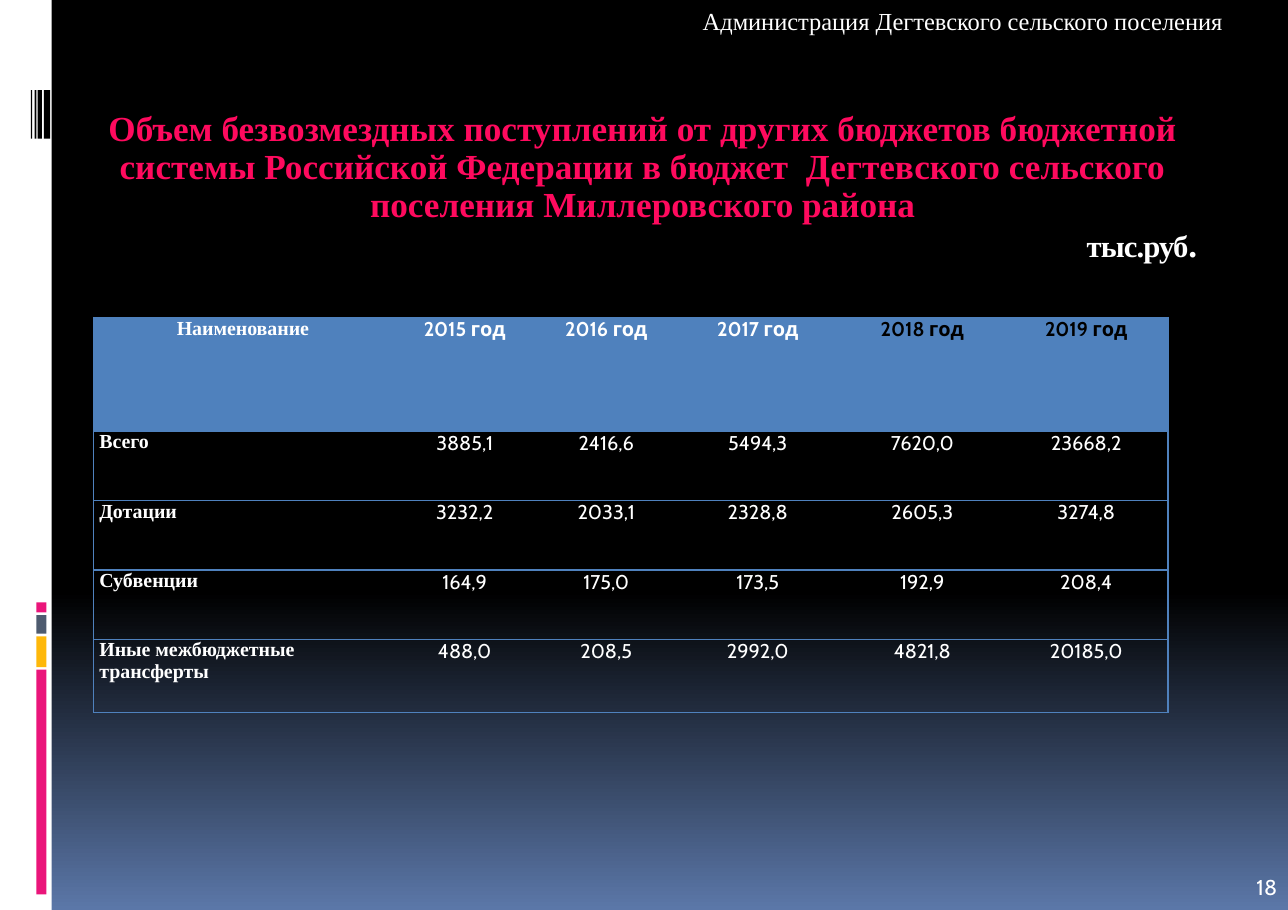
from dataclasses import dataclass

from lxml import etree
from pptx import Presentation
from pptx.dml.color import RGBColor
from pptx.enum.shapes import MSO_SHAPE
from pptx.enum.text import MSO_ANCHOR, PP_ALIGN
from pptx.oxml.ns import qn
from pptx.util import Cm, Pt

RECTANGLE = MSO_SHAPE.RECTANGLE
LEFT, CENTER, RIGHT = PP_ALIGN.LEFT, PP_ALIGN.CENTER, PP_ALIGN.RIGHT
TOP, BOTTOM = MSO_ANCHOR.TOP, MSO_ANCHOR.BOTTOM


@dataclass(frozen=True)
class Theme:
    """Colours, fonts and type sizes of the slide."""
    white: str = "FFFFFF"
    black: str = "000000"
    sky: str = "5B77A8"
    pink: str = "EA157A"
    amber: str = "FEB80A"
    slate: str = "4E5B6F"
    title: str = "FF0A5E"
    grid: str = "4F81BD"
    serif: str = "Times New Roman"
    sans: str = "Cabin"
    title_size: int = 23
    unit_size: int = 20
    owner_size: int = 16
    number_size: int = 14
    table_size: int = 13


@dataclass(frozen=True)
class Box:
    """A region in centimetres."""
    left: float
    top: float
    width: float
    height: float

    def lengths(self):
        """Return the region as slide lengths."""
        return Cm(self.left), Cm(self.top), Cm(self.width), Cm(self.height)


THEME = Theme()
HEADINGS = ["Наименование", "2015 год", "2016 год", "2017 год", "2018 год", "2019 год"]
RECEIPTS = [
    ["Всего", "3885,1", "2416,6", "5494,3", "7620,0", "23668,2"],
    ["Дотации", "3232,2", "2033,1", "2328,8", "2605,3", "3274,8"],
    ["Субвенции", "164,9", "175,0", "173,5", "192,9", "208,4"],
    ["Иные межбюджетные трансферты", "488,0", "208,5", "2992,0", "4821,8", "20185,0"],
]
COLUMN_SHARES = [6.88, 3.35, 3.18, 3.81, 3.78, 3.78]
ROW_SHARES = [2.62, 1.6, 1.6, 1.6, 1.68]


def style_run(run, size, color=THEME.white, font=THEME.serif, bold=False):
    """Set the type of a run."""
    run.font.name = font
    run.font.size = Pt(size)
    run.font.bold = bold
    run.font.color.rgb = RGBColor.from_string(color)


def add_label(slide, box, text, size, color=THEME.white, font=THEME.serif,
              bold=False, align=LEFT, anchor=TOP, inset=(0, 0), line=None):
    """Write one paragraph in a box and return it."""
    frame = slide.shapes.add_textbox(*box.lengths()).text_frame
    frame.word_wrap = True
    frame.vertical_anchor = anchor
    frame.margin_left = frame.margin_right = Cm(inset[0])
    frame.margin_top = frame.margin_bottom = Cm(inset[1])
    frame.text = text
    paragraph = frame.paragraphs[0]
    paragraph.alignment = align
    if line:
        paragraph.line_spacing = Pt(line)
    style_run(paragraph.runs[0], size, color, font, bold)
    return paragraph


def add_bar(slide, box, color):
    """Draw a plain filled rectangle."""
    bar = slide.shapes.add_shape(RECTANGLE, *box.lengths())
    bar.shadow.inherit = False
    bar.fill.solid()
    bar.fill.fore_color.rgb = RGBColor.from_string(color)
    bar.line.fill.background()


def paint_background(slide):
    """Fade the slide from black to blue at the foot."""
    fill = slide.background.fill
    fill.gradient()
    fill.gradient_angle = 270
    for stop, position, color in zip(fill.gradient_stops, (0.65, 1), (THEME.black, THEME.sky)):
        stop.position = position
        stop.color.rgb = RGBColor.from_string(color)


def add_sidebar(slide, box):
    """Draw the white strip with its stripes and coloured blocks."""
    add_bar(slide, box, THEME.white)
    for offset, width in ((0.71, 0.03), (0.8, 0.04), (0.87, 0.1), (1.01, 0.15)):
        add_bar(slide, Box(box.left + offset, box.top + 2.08, width, 1.12), THEME.black)
    top, gap = box.top + 13.89, 0.06
    blocks = ((0.23, THEME.pink), (0.43, THEME.slate), (0.71, THEME.amber), (5.18, THEME.pink))
    for height, color in blocks:
        add_bar(slide, Box(box.left + 0.84, top, 0.23, height), color)
        top += height + gap


def add_heading(slide, box):
    """Write the title with the unit of measure beneath it."""
    add_label(
        slide, Box(box.left, box.top, box.width, 2.67),
        "Объем безвозмездных поступлений от других бюджетов бюджетной системы "
        "Российской Федерации в бюджет  Дегтевского сельского поселения "
        "Миллеровского района",
        THEME.title_size, THEME.title, bold=True, align=CENTER, line=25)
    unit = add_label(slide, Box(box.left + 23.05, box.top + 2.67, 3.6, 0.89), "тыс.руб",
                     THEME.unit_size, bold=True, line=25)
    unit.runs[0].font._element.set("spc", "-60")
    stop = unit.add_run()
    stop.text = "."
    style_run(stop, THEME.title_size, bold=True)


def set_borders(cell, edges):
    """Rule the named edges of a cell and clear the others."""
    properties = cell._tc.get_or_add_tcPr()
    for edge in "LRTB":
        line = etree.SubElement(properties, qn(f"a:ln{edge}"), w=str(Pt(1)))
        if edge in edges:
            fill = etree.SubElement(line, qn("a:solidFill"))
            etree.SubElement(fill, qn("a:srgbClr"), val=THEME.grid)
        else:
            etree.SubElement(line, qn("a:noFill"))


def fill_cell(cell, text, row, column):
    """Write and format one cell according to its place."""
    is_header, is_name = row == 0, column == 0
    is_last = column == len(HEADINGS) - 1
    set_borders(cell, "TB" + "L" * is_name + "R" * is_last)
    if is_header:
        cell.fill.solid()
        cell.fill.fore_color.rgb = RGBColor.from_string(THEME.grid)
    else:
        cell.fill.background()
    cell.margin_left = cell.margin_right = Cm(0.13)
    cell.margin_top = cell.margin_bottom = 0
    cell.text_frame.text = text
    paragraph = cell.text_frame.paragraphs[0]
    paragraph.alignment = LEFT if is_name and not is_header else CENTER
    style_run(paragraph.runs[0], THEME.table_size,
              THEME.black if is_header and column >= 4 else THEME.white,
              THEME.serif if is_name else THEME.sans, is_header or is_name)


def add_receipts_table(slide, box):
    """Build the table of receipts by year."""
    rows = [HEADINGS, *RECEIPTS]
    table = slide.shapes.add_table(len(rows), len(HEADINGS), *box.lengths()).table
    table.first_row = table.horz_banding = False
    for column, share in zip(table.columns, COLUMN_SHARES):
        column.width = Cm(box.width * share / sum(COLUMN_SHARES))
    for row, share in zip(table.rows, ROW_SHARES):
        row.height = Cm(box.height * share / sum(ROW_SHARES))
    for r, texts in enumerate(rows):
        for c, text in enumerate(texts):
            fill_cell(table.cell(r, c), text, r, c)


def main():
    """Build the slide and save it."""
    deck = Presentation()
    deck.slide_width, deck.slide_height = Cm(29.69), Cm(20.98)
    slide = deck.slides.add_slide(deck.slide_layouts[6])
    paint_background(slide)
    add_sidebar(slide, Box(0, 0, 1.19, 20.98))
    add_receipts_table(slide, Box(2.16, 7.32, 24.77, 9.1))
    add_heading(slide, Box(2, 2.54, 25.65, 3.56))
    add_label(slide, Box(27.97, 19.63, 1.47, 1.12), "18", THEME.number_size,
              font=THEME.sans, align=RIGHT, anchor=BOTTOM)
    add_label(slide, Box(15.95, 0, 13.74, 0.94),
              "Администрация Дегтевского сельского поселения",
              THEME.owner_size, inset=(0.25, 0.13))
    deck.save("out.pptx")


if __name__ == "__main__":
    main()
